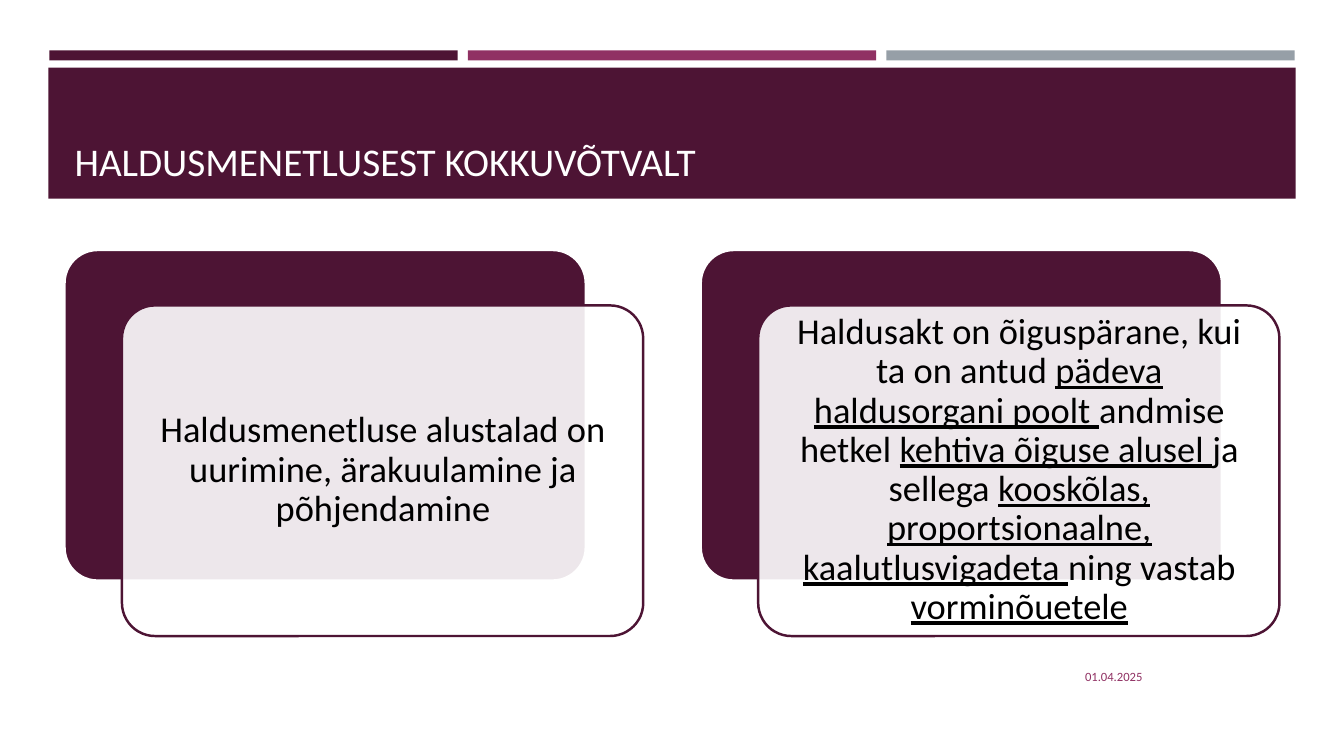
from lxml import etree
from pptx import Presentation
from pptx import util as u
from pptx.dml.color import RGBColor
from pptx.enum import shapes, text
from pptx.oxml.ns import qn

PLUM, BERRY, GREY = "4D1434", "903163", "969FA7"
WHITE, BLACK = "FFFFFF", "000000"


def color(value):
    return RGBColor.from_string(value)


def write(box, spans, size, ink, align=text.PP_ALIGN.LEFT,
          anchor=text.MSO_ANCHOR.MIDDLE, spacing=1.0, inset=None):
    frame = box.text_frame
    frame.word_wrap = True
    frame.auto_size = text.MSO_AUTO_SIZE.NONE
    frame.vertical_anchor = anchor
    if inset is not None:
        frame.margin_left = frame.margin_right = u.Inches(inset)
        frame.margin_top = frame.margin_bottom = u.Inches(inset)
    para = frame.paragraphs[0]
    para.alignment = align
    para.line_spacing = spacing
    for words, underlined in spans:
        span = para.add_run()
        span.text = words
        span.font.name = "Calibri"
        span.font.size = u.Pt(size)
        span.font.color.rgb = color(ink)
        span.font.underline = underlined


class SlideBuilder:
    def __init__(self, slide):
        self.slide = slide

    def shape(self, kind, place, fill, line=None, opacity=None):
        shape = self.slide.shapes.add_shape(kind, *map(u.Inches, place))
        shape.shadow.inherit = False
        shape.fill.solid()
        shape.fill.fore_color.rgb = color(fill)
        if opacity is not None:
            tint = shape.fill._xPr.find(qn("a:solidFill"))[0]
            etree.SubElement(tint, qn("a:alpha")).set("val", str(opacity * 1000))
        if line:
            shape.line.color.rgb = color(line)
            shape.line.width = u.Pt(1.75)
        else:
            shape.line.fill.background()
        return shape

    def bar(self, place, fill):
        return self.shape(shapes.MSO_SHAPE.RECTANGLE, place, fill)

    def panel(self, place, fill, line, opacity=None):
        panel = self.shape(shapes.MSO_SHAPE.ROUNDED_RECTANGLE, place, fill, line, opacity)
        panel.adjustments[0] = 0.1

    def title(self, words, place):
        title = self.slide.shapes.title
        title.left, title.top, title.width, title.height = map(u.Inches, place)
        self.slide.shapes._spTree.append(title._element)
        write(title, [(words, False)], 28, WHITE, anchor=text.MSO_ANCHOR.BOTTOM)

    def label(self, spans, place, size, ink, **layout):
        box = self.slide.shapes.add_textbox(*map(u.Inches, place))
        write(box, spans, size, ink, **layout)

    def card(self, left, spans):
        self.panel((left, 2.48, 5.17, 3.28), PLUM, WHITE)
        self.panel((left + 0.57, 3.03, 5.17, 3.28), WHITE, PLUM, opacity=90)
        self.label(spans, (left + 0.67, 3.12, 4.98, 3.09), 26, BLACK,
                   align=text.PP_ALIGN.CENTER, spacing=0.9, inset=0.11)


def main():
    deck = Presentation()
    deck.slide_width, deck.slide_height = u.Inches(13.33), u.Inches(7.5)
    builder = SlideBuilder(deck.slides.add_slide(deck.slide_layouts[5]))

    for column, fill in enumerate((PLUM, BERRY, GREY)):
        builder.bar((0.49 + 4.15 * column, 0.5, 4.05, 0.1), fill)
    builder.bar((0.48, 0.67, 12.37, 1.3), PLUM)
    builder.title("HALDUSMENETLUSEST KOKKUVÕTVALT", (0.64, 0.77, 12.06, 1.11))

    cards = [
        [("Haldusmenetluse alustalad on uurimine, ärakuulamine ja põhjendamine", False)],
        [("Haldusakt on õiguspärane, kui ta on antud ", False),
         ("pädeva haldusorgani poolt ", True),
         ("andmise hetkel ", False),
         ("kehtiva õiguse alusel ", True),
         ("ja sellega ", False),
         ("kooskõlas, proportsionaalne, kaalutlusvigadeta ", True),
         ("ning vastab ", False),
         ("vorminõuetele", True)],
    ]
    for column, spans in enumerate(cards):
        builder.card(0.64 + 6.31 * column, spans)

    builder.label([("01.04.2025", False)], (8.32, 6.51, 3.11, 0.4), 9, BERRY,
                  align=text.PP_ALIGN.RIGHT)
    deck.save("out.pptx")


if __name__ == "__main__":
    main()
